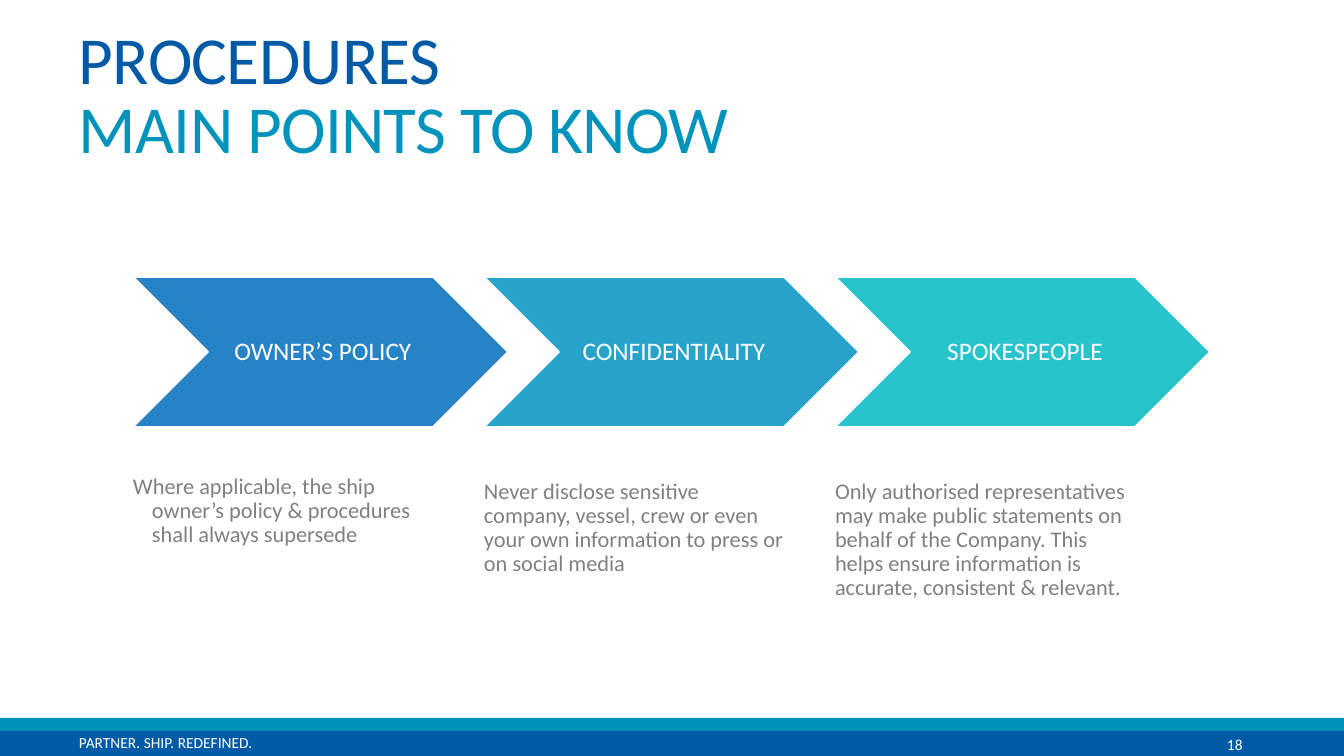
"""Build the slide on the main points of the procedures."""
import pptx
import pptx.dml.color
import pptx.enum.shapes
import pptx.enum.text
import pptx.util

TITLE = [("PROCEDURES", "blue"), ("MAIN POINTS TO KNOW", "teal")]
STEPS = [
    dict(name="OWNER’S POLICY", fill="step1", top=475, hang=19,
         note="Where applicable, the ship owner’s policy & procedures shall always supersede"),
    dict(name="CONFIDENTIALITY", fill="step2", top=480, hang=0,
         note="Never disclose sensitive company, vessel, crew or even your own "
              "information to press or on social media"),
    dict(name="SPOKESPEOPLE", fill="step3", top=480, hang=0,
         note="Only authorised representatives may make public statements on behalf of "
              "the Company. This helps ensure information is accurate, consistent & relevant."),
]
BARS = [("teal", 718, 14), ("blue", 731, 25)]
FOOT = [("PARTNER. SHIP. REDEFINED.", (69, 728, 275, 29), (10, 5, 10, 5)),
        ("18", (1227, 730, 31, 25), (0, 5, 0, 5))]
COLORS = dict(blue="005AA5", teal="0093BB", step1="2683C6", step2="27A3C9",
              step3="28C4CC", grey="808080", white="FFFFFF")
FONT = "Calibri"
WIDE, HIGH = 1344, 756
LEFT, PITCH = 133, 351
SCALE = 914400 / 100.8

KIND = pptx.enum.shapes.MSO_SHAPE
ANCHOR = pptx.enum.text.MSO_ANCHOR
ALIGN = pptx.enum.text.PP_ALIGN


def emu(px):
    return pptx.util.Emu(round(px * SCALE))


def color(key):
    return pptx.dml.color.RGBColor.from_string(COLORS[key])


def shape(slide, kind, area, fill):
    item = slide.shapes.add_shape(kind, *map(emu, area))
    item.shadow.inherit = False
    item.fill.solid()
    item.fill.fore_color.rgb = color(fill)
    item.line.fill.background()
    return item


def write(item, lines, size, inset=(10, 5, 10, 5), anchor=ANCHOR.TOP,
          align=ALIGN.LEFT, space=1.0):
    frame = item.text_frame
    frame.word_wrap = True
    frame.vertical_anchor = anchor
    (frame.margin_left, frame.margin_top,
     frame.margin_right, frame.margin_bottom) = map(emu, inset)
    for i, (text, tint) in enumerate(lines):
        para = frame.add_paragraph() if i else frame.paragraphs[0]
        para.text = text
        para.alignment = align
        para.line_spacing = space
        para.font.name = FONT
        para.font.size = pptx.util.Pt(size)
        para.font.color.rgb = color(tint)
    return frame.paragraphs


def box(slide, area, lines, size, **style):
    return write(slide.shapes.add_textbox(*map(emu, area)), lines, size, **style)


def main():
    deck = pptx.Presentation()
    deck.slide_width, deck.slide_height = emu(WIDE), emu(HIGH)
    slide = deck.slides.add_slide(deck.slide_layouts[6])

    for fill, top, high in BARS:
        shape(slide, KIND.RECTANGLE, (0, top, WIDE, high), fill)
    for text, area, inset in FOOT:
        box(slide, area, [(text, "white")], 11, inset=inset)

    for i, step in enumerate(STEPS):
        left = LEFT + i * PITCH
        arrow = shape(slide, KIND.CHEVRON, (left, 277, 375, 150), step["fill"])
        arrow.line.color.rgb = color("white")
        arrow.line.width = pptx.util.Pt(1.25)
        write(arrow, [(step["name"], "white")], 18, inset=(8, 3, 3, 3),
              anchor=ANCHOR.MIDDLE, align=ALIGN.CENTER, space=0.9)
        para = box(slide, (left, step["top"], 301, 604 - step["top"]),
                   [(step["note"], "grey")], 16, inset=(0, 0, 0, 0), space=0.9)[0]
        if step["hang"]:
            props = para._p.get_or_add_pPr()
            props.set("marL", str(emu(step["hang"])))
            props.set("indent", str(-emu(step["hang"])))

    for para in box(slide, (69, 12, 1080, 160), TITLE, 48,
                    anchor=ANCHOR.BOTTOM, space=0.85):
        para.runs[0]._r.get_or_add_rPr().set("spc", "-50")

    deck.save("out.pptx")


if __name__ == "__main__":
    main()
